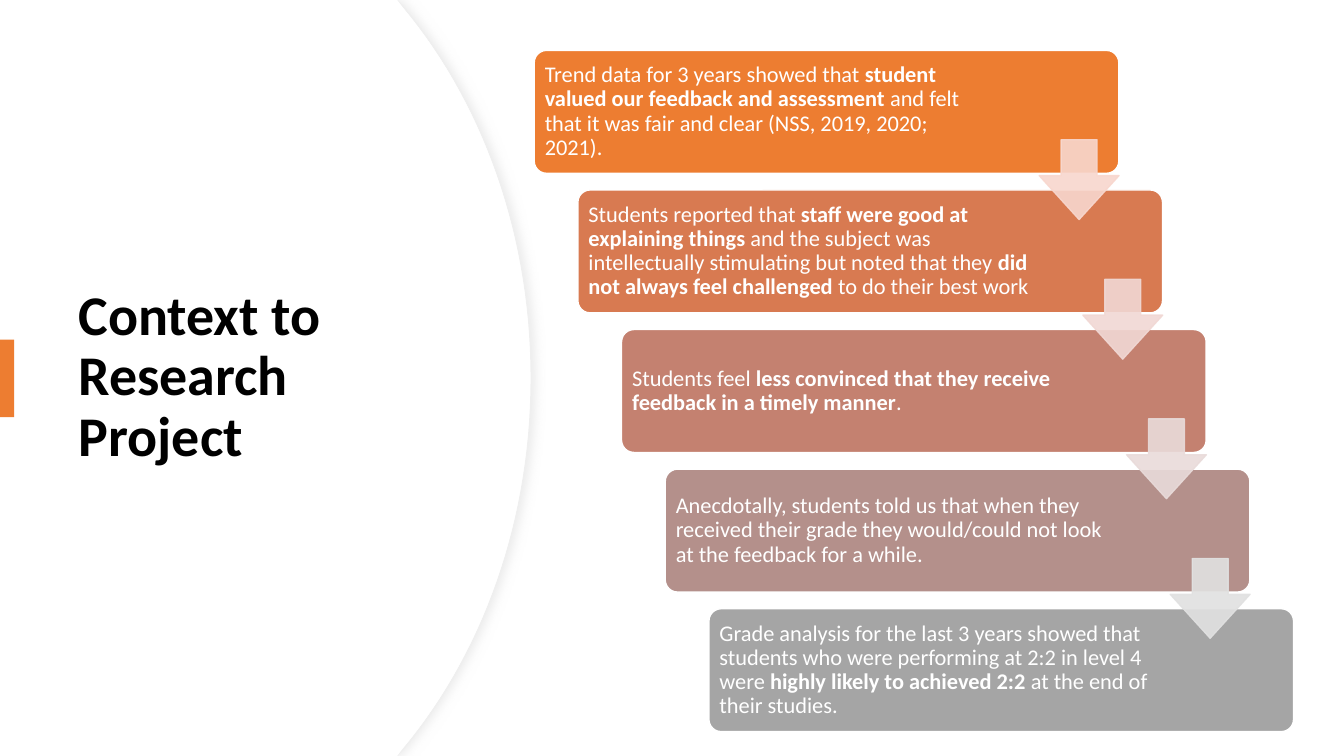
import pptx
import pptx.dml.color
import pptx.enum.shapes
import pptx.enum.text
import pptx.oxml
import pptx.oxml.ns
import pptx.util
from lxml import etree

Pt = pptx.util.Pt
qn = pptx.oxml.ns.qn
SHAPES = pptx.enum.shapes.MSO_SHAPE

SHADOW = (
    f'<a:effectLst {pptx.oxml.ns.nsdecls("a")}>'
    f'<a:outerShdw blurRad="{Pt(7)}" dist="{Pt(3)}" dir="0" algn="l" rotWithShape="0">'
    '<a:srgbClr val="D9D9D9"><a:alpha val="50000"/></a:srgbClr>'
    '</a:outerShdw></a:effectLst>'
)

FINDINGS = [
    ("ED7D31", 104, "Trend data for 3 years showed that *student valued our feedback and assessment *"
     "and felt that it was fair and clear (NSS, 2019, 2020; 2021)."),
    ("D87A51", 92.5, "Students reported that *staff were good at explaining things *and the subject was "
     "intellectually stimulating but noted that they *did not always feel challenged *"
     "to do their best work"),
    ("C48170", 92.5, "Students feel *less convinced that they receive feedback in a timely manner*."),
    ("B4908B", 92.5, "Anecdotally, students told us that when they received their grade "
     "they would/could not look at the feedback for a while."),
    ("A5A5A5", 92.5, "Grade analysis for the last 3 years showed that students who were performing at 2:2 "
     "in level 4 were *highly likely to achieved 2:2 *at the end of their studies."),
]
ARROW_COLOURS = ["F8D7CE", "F1D8D4", "E9DBDA", "E1E1E1"]
STEP_RIGHT, STEP_DOWN = 31.2, 99.7


def colour(value):
    return pptx.dml.color.RGBColor.from_string(value)


def curve(start, first, second, end, steps=30):
    return [
        tuple((1 - t) ** 3 * a + 3 * (1 - t) ** 2 * t * b + 3 * (1 - t) * t ** 2 * c + t ** 3 * d
              for a, b, c, d in zip(start, first, second, end))
        for t in (step / steps for step in range(steps + 1))
    ]


class SlideBuilder:
    """Draws styled elements, measured in points, on the current slide."""

    font = "Calibri"

    def __init__(self, deck):
        self.page = deck.slides.add_slide(deck.slide_layouts[5])

    def paint(self, shape, fill, line=None, width=1):
        shape.shadow.inherit = False
        shape.fill.solid()
        shape.fill.fore_color.rgb = colour(fill)
        if line:
            shape.line.color.rgb = colour(line)
            shape.line.width = Pt(width)
        else:
            shape.line.fill.background()

    def shape(self, kind, left, top, width, height, fill, line=None, adjustments=()):
        shape = self.page.shapes.add_shape(kind, Pt(left), Pt(top), Pt(width), Pt(height))
        for index, value in enumerate(adjustments):
            shape.adjustments[index] = value
        self.paint(shape, fill, line)
        return shape

    def text(self, shape, words, size, ink):
        frame = shape.text_frame
        frame.word_wrap = True
        frame.auto_size = pptx.enum.text.MSO_AUTO_SIZE.NONE
        frame.vertical_anchor = pptx.enum.text.MSO_ANCHOR.MIDDLE
        para = frame.paragraphs[0]
        para.alignment = pptx.enum.text.PP_ALIGN.LEFT
        para.line_spacing = 0.9
        para.font.name = self.font
        para.font.size = Pt(size)
        para.font.color.rgb = colour(ink)
        for index, part in enumerate(words.split("*")):
            if part:
                span = para.add_run()
                span.text = part
                span.font.bold = index % 2 == 1

    def title(self, words, left, top, width, height):
        title = self.page.shapes.title
        title.left, title.top, title.width, title.height = map(Pt, (left, top, width, height))
        self.text(title, words, 40, "000000")

    def curved_panel(self, shift=0, line=None, shadow=False):
        upper = curve((288.7 - shift, 5.8), (344.9 - shift, 73.4),
                      (379.4 - shift, 167), (379.4 - shift, 270))
        lower = [(x, 540 - y) for x, y in reversed(upper[:-1])]
        outline = [(283.7, 0), *upper, *lower, (283.7, 540), (0, 540)]
        builder = self.page.shapes.build_freeform(0, 0)
        builder.add_line_segments([(Pt(x), Pt(y)) for x, y in outline], close=True)
        panel = builder.convert_to_shape()
        self.paint(panel, "FFFFFF", line, 0.75)
        if shadow:
            effects = panel.element.spPr.find(qn("a:effectLst"))
            effects.getparent().replace(effects, pptx.oxml.parse_xml(SHADOW))

    def finding(self, left, top, fill, right_margin, words):
        box = self.shape(SHAPES.ROUNDED_RECTANGLE, left, top, 417.6, 87.8, fill, "FFFFFF", [0.1])
        frame = box.text_frame
        frame.margin_left = frame.margin_top = frame.margin_bottom = Pt(5)
        frame.margin_right = Pt(right_margin)
        self.text(box, words, 16, "FFFFFF")

    def arrow(self, left, top, fill):
        arrow = self.shape(SHAPES.DOWN_ARROW, left, top, 57, 57, fill, fill)
        arrow.adjustments[0] = 0.45
        arrow.adjustments[1] = 0.55
        for tint in arrow.element.spPr.iter(qn("a:srgbClr")):
            etree.SubElement(tint, qn("a:alpha"), val="90000")


def main():
    deck = pptx.Presentation()
    deck.slide_width, deck.slide_height = Pt(960), Pt(540)
    slide = SlideBuilder(deck)
    slide.curved_panel(line="EFEFEF", shadow=True)
    slide.curved_panel(shift=0.7)
    title = slide.page.shapes.title.element
    title.getparent().append(title)
    slide.title("*Context to Research Project*", 49, 91.4, 283.7, 356.4)
    slide.shape(SHAPES.RECTANGLE, 0, 242.6, 10.1, 55.4, "ED7D31")
    for index, (fill, right_margin, words) in enumerate(FINDINGS):
        slide.finding(381.6 + index * STEP_RIGHT, 36 + index * STEP_DOWN, fill, right_margin, words)
    for index, fill in enumerate(ARROW_COLOURS):
        slide.arrow(742.3 + index * STEP_RIGHT, 99.8 + index * STEP_DOWN, fill)
    deck.save("out.pptx")


if __name__ == "__main__":
    main()
